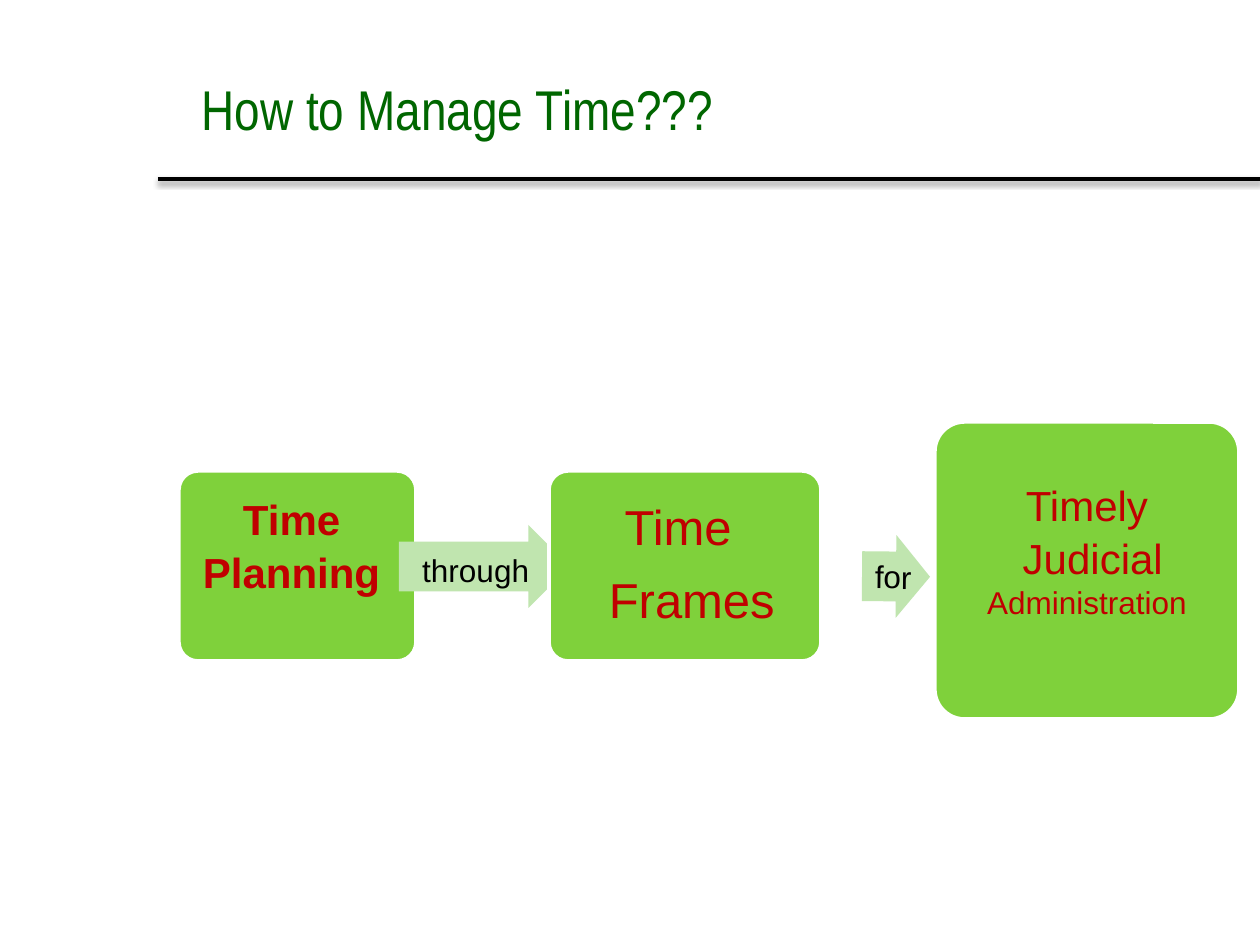
"""Build the slide on how to manage time."""
from dataclasses import dataclass

from lxml.etree import SubElement
from pptx import Presentation
from pptx.dml.color import RGBColor
from pptx.enum.shapes import MSO_CONNECTOR, MSO_SHAPE
from pptx.enum.text import MSO_ANCHOR, PP_ALIGN
from pptx.oxml.ns import qn
from pptx.util import Emu, Pt

COLORS = {
    "title": "006600",
    "box": "7FD13B",
    "arrow": "C0E5AF",
    "stage": "C00000",
    "black": "000000",
    "white": "FFFFFF",
}


@dataclass(frozen=True)
class Line:
    spans: tuple[tuple[str, int], ...]
    before: float = 0
    after: float = 0
    spacing: float = 1.0


@dataclass(frozen=True)
class Stage:
    area: tuple[int, int, int, int]
    lines: tuple[Line, ...]
    insets: tuple[int, int, int, int]
    bold: bool = False


@dataclass(frozen=True)
class Arrow:
    area: tuple[int, int, int, int]
    label: str
    insets: tuple[int, int, int, int]
    rotation: float = 0


STEPS = (
    Stage((179, 471, 237, 190),
          (Line((("Time ", 24),)), Line((("Planning ", 24),), before=1.5)),
          (13, 13, 13, 54), bold=True),
    Arrow((399, 525, 171, 83), "through ", (16, 7, 0, 0)),
    Stage((549, 471, 272, 190),
          (Line((("Time ", 28),), after=11.5, spacing=0.9),
           Line(((" Frames", 28),), spacing=0.9)),
          (15, 15, 15, 15)),
    Arrow((862, 535, 68, 83), "for", (15, 0, 0, 0), rotation=0.6),
    Stage((935, 422, 304, 297),
          (Line((("Timely", 24),)),
           Line(((" Judicial ", 24), ("Administration", 18)), before=1.5)),
          (13, 13, 13, 54)),
)


def px(length: int) -> Emu:
    """Turn pixels into EMU."""
    return Emu(round(length * 914400 / 126))


def color(name: str) -> RGBColor:
    """Look up a named colour."""
    return RGBColor.from_string(COLORS[name])


def add_block(page, kind, area, fill: str, insets):
    """Add a filled shape with a centred text frame."""
    shape = page.shapes.add_shape(kind, *map(px, area))
    shape.shadow.inherit = False
    shape.fill.solid()
    shape.fill.fore_color.rgb = color(fill)
    shape.line.fill.background()
    frame = shape.text_frame
    frame.vertical_anchor = MSO_ANCHOR.MIDDLE
    (frame.margin_left, frame.margin_top,
     frame.margin_right, frame.margin_bottom) = map(px, insets)
    return shape


def write(frame, lines: tuple[Line, ...], ink: str, bold: bool = False) -> None:
    """Write centred lines into a text frame."""
    for index, line in enumerate(lines):
        para = frame.add_paragraph() if index else frame.paragraphs[0]
        para.alignment = PP_ALIGN.CENTER
        para.line_spacing = line.spacing
        para.space_after = Pt(line.after)
        if index:
            para.space_before = Pt(line.before)
        for text, size in line.spans:
            span = para.add_run()
            span.text = text
            span.font.name = "Arial"
            span.font.size = Pt(size)
            span.font.bold = bold
            span.font.color.rgb = color(ink)


def add_stage(page, stage: Stage) -> None:
    """Add one rounded box."""
    box = add_block(page, MSO_SHAPE.ROUNDED_RECTANGLE, stage.area, "box", stage.insets)
    box.adjustments[0] = 0.1
    box.line.color.rgb = color("white")
    box.line.width = Pt(2)
    box.text_frame.word_wrap = True
    write(box.text_frame, stage.lines, "stage", stage.bold)


def add_arrow(page, arrow: Arrow) -> None:
    """Add one labelled block arrow."""
    shape = add_block(page, MSO_SHAPE.RIGHT_ARROW, arrow.area, "arrow", arrow.insets)
    shape.adjustments[0] = 0.6
    shape.adjustments[1] = 0.5
    shape.rotation = arrow.rotation
    shape.text_frame.word_wrap = False
    write(shape.text_frame, (Line(((arrow.label, 18),)),), "black")


def add_title(page, text: str) -> None:
    """Place and format the title."""
    title = page.shapes.title
    title.left, title.top, title.width, title.height = map(px, (189, 38, 1029, 141))
    title.text_frame.text = text
    title.text_frame.vertical_anchor = MSO_ANCHOR.MIDDLE
    para = title.text_frame.paragraphs[0]
    para.alignment = PP_ALIGN.LEFT
    font = para.runs[0].font
    font.name = "Arial Narrow"
    font.size = Pt(32)
    font.color.rgb = color("title")


def add_rule(page) -> None:
    """Add the shadowed rule under the title."""
    rule = page.shapes.add_connector(
        MSO_CONNECTOR.STRAIGHT, *map(px, (158, 179, 1260, 179)))
    rule.line.color.rgb = color("black")
    rule.line.width = Pt(2)
    effects = SubElement(rule._element.spPr, qn("a:effectLst"))
    shadow = SubElement(effects, qn("a:outerShdw"), blurRad="40000", dist="20000",
                        dir="5400000", rotWithShape="0")
    tint = SubElement(shadow, qn("a:srgbClr"), val=COLORS["black"])
    SubElement(tint, qn("a:alpha"), val="38000")


def main() -> None:
    """Build and save the deck."""
    deck = Presentation()
    deck.slide_width, deck.slide_height = px(1260), px(945)
    page = deck.slides.add_slide(deck.slide_layouts[5])
    add_rule(page)
    add_title(page, "How to Manage Time???")
    for step in STEPS:
        if isinstance(step, Stage):
            add_stage(page, step)
        else:
            add_arrow(page, step)
    deck.save("out.pptx")


if __name__ == "__main__":
    main()
